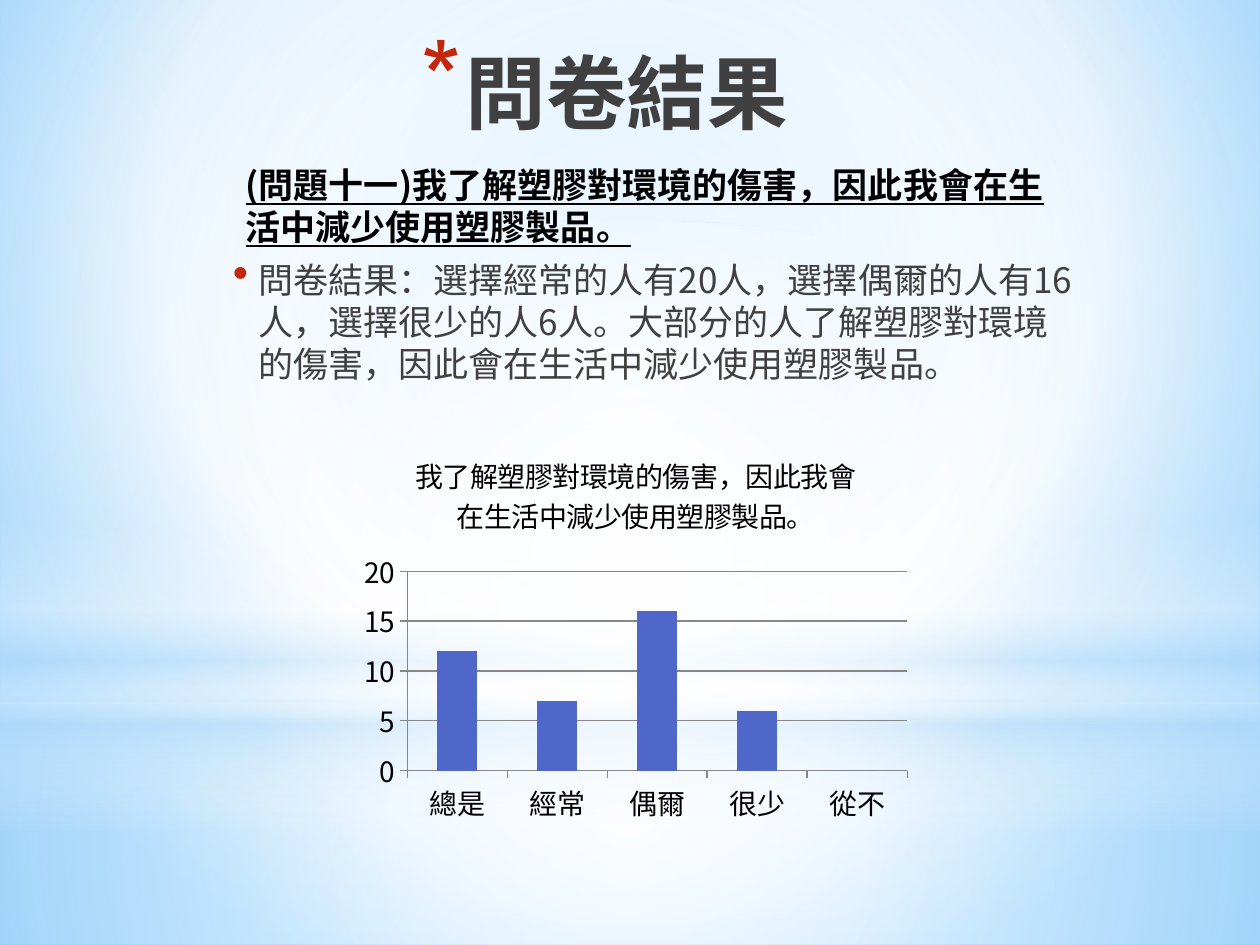
"""Build the survey result slide for question eleven, with its column chart."""
from dataclasses import dataclass

from lxml import etree
from pptx import Presentation
from pptx.chart.data import CategoryChartData
from pptx.dml.color import RGBColor
from pptx.enum.chart import XL_CHART_TYPE as ChartType, XL_TICK_MARK as TickMark
from pptx.enum.shapes import MSO_SHAPE as Preset
from pptx.enum.text import MSO_ANCHOR as Anchor, PP_ALIGN as Align
from pptx.oxml.ns import qn
from pptx.util import Inches, Pt


@dataclass(frozen=True)
class Theme:
    font: str = "Noto Sans CJK SC"
    text: RGBColor = RGBColor(0x40, 0x40, 0x40)
    strong: RGBColor = RGBColor(0, 0, 0)
    column: RGBColor = RGBColor(0x4E, 0x67, 0xC8)
    grid: RGBColor = RGBColor(0x87, 0x87, 0x87)
    bullet: str = "C3260C"
    white: str = "FFFFFF"
    haze: str = "B4DCFA"
    sky: str = "9ED5FF"
    deep_sky: str = "5BB9FF"
    title_size: Pt = Pt(46)
    body_size: Pt = Pt(20)
    chart_size: Pt = Pt(16)


theme = Theme()


def set_gradient(fill, parent, stops, focus):
    """Fill with position, colour, opacity stops around a focus, or downwards without one."""
    fill.solid()
    solid = parent.find(qn("a:solidFill"))
    gradient = etree.Element(qn("a:gradFill"), rotWithShape="1")
    stop_list = etree.SubElement(gradient, qn("a:gsLst"))
    for position, color, opacity in stops:
        stop = etree.SubElement(stop_list, qn("a:gs"), pos=str(position * 1000))
        color_node = etree.SubElement(stop, qn("a:srgbClr"), val=color)
        if opacity < 100:
            etree.SubElement(color_node, qn("a:alpha"), val=str(opacity * 1000))
    if focus:
        path_node = etree.SubElement(gradient, qn("a:path"), {"path": "circle"})
        edges = {edge: str(value * 1000) for edge, value in zip("ltrb", focus)}
        etree.SubElement(path_node, qn("a:fillToRect"), edges)
    else:
        etree.SubElement(gradient, qn("a:lin"), ang="5400000", scaled="0")
    parent.replace(solid, gradient)


def format_text(shape, text, size, color, bold=False, bullet=None, bullet_size=100, indent=0, hang=0):
    """Write one paragraph into a shape, with an optional hanging bullet."""
    frame = shape.text_frame
    frame.word_wrap = True
    frame.vertical_anchor = Anchor.TOP
    frame.text = text
    paragraph = frame.paragraphs[0]
    font = paragraph.font
    font.name, font.size, font.bold = theme.font, size, bold
    font.color.rgb = color
    etree.SubElement(font._element, qn("a:ea"), typeface=theme.font)
    if bullet:
        properties = paragraph._p.get_or_add_pPr()
        properties.set("marL", str(Inches(indent)))
        properties.set("indent", str(Inches(-hang)))
        bullet_color = etree.Element(qn("a:buClr"))
        etree.SubElement(bullet_color, qn("a:srgbClr"), val=theme.bullet)
        scale = etree.Element(qn("a:buSzPct"), val=str(bullet_size * 1000))
        character = etree.Element(qn("a:buChar"), char=bullet)
        for position, node in enumerate((bullet_color, scale, character)):
            properties.insert(position, node)
    return paragraph


presentation = Presentation()
presentation.slide_width, presentation.slide_height = Inches(10), Inches(7.5)
slide = presentation.slides.add_slide(presentation.slide_layouts[5])

background = slide.background.fill
background.solid()
set_gradient(
    background,
    slide._element.find(".//" + qn("p:bgPr")),
    [(0, theme.sky, 100), (60, theme.white, 100), (100, theme.deep_sky, 100)],
    (20, 10, 20, 60),
)

center = (50, 50, 50, 50)
lower_stops = [(0, theme.white, 91), (37, theme.white, 76), (100, theme.haze, 79)]
upper_stops = [(0, theme.white, 89), (48, theme.white, 62), (100, theme.haze, 79)]
band_stops = [
    (0, theme.white, 0), (29, theme.white, 30), (45, theme.haze, 40),
    (55, theme.white, 26), (65, theme.haze, 60), (100, theme.white, 0),
]
glow_stops = [(0, theme.white, 100), (56, theme.white, 0)]
for preset, top, height, stops, focus in (
    (Preset.RECTANGLE, 5.58, 1.92, lower_stops, center),
    (Preset.RECTANGLE, 0, 5.58, upper_stops, center),
    (Preset.RECTANGLE, 4.12, 2.5, band_stops, None),
    (Preset.OVAL, 1.75, 5.58, glow_stops, center),
):
    layer = slide.shapes.add_shape(preset, 0, Inches(top), Inches(10), Inches(height))
    layer.shadow.inherit = False
    layer.line.fill.background()
    set_gradient(layer.fill, layer._element.spPr, stops, focus)

title = slide.shapes.title
title.left, title.top, title.width, title.height = Inches(1.61), Inches(0.29), Inches(6.38), Inches(1.25)
slide.shapes._spTree.append(title._element)
heading = format_text(title, "問卷結果", theme.title_size, theme.text, True, "*", 128, 0.35, 0.35)
heading.alignment = Align.CENTER

result_box = slide.shapes.add_textbox(Inches(1.7), Inches(2), Inches(7), Inches(1.26))
result = format_text(
    result_box,
    "問卷結果：選擇經常的人有20人，選擇偶爾的人有16人，選擇很少的人6人。"
    "大部分的人了解塑膠對環境的傷害，因此會在生活中減少使用塑膠製品。",
    theme.body_size, theme.text, False, "•", 130, 0.25, 0.2,
)
result.space_before, result.space_after = Pt(4), Pt(3)

statement = "我了解塑膠對環境的傷害，因此我會在生活中減少使用塑膠製品。"
question_box = slide.shapes.add_textbox(Inches(1.85), Inches(1.25), Inches(6.69), Inches(0.77))
question = format_text(question_box, "(問題十一)" + statement, theme.body_size, theme.strong, True)
question.font.underline = True

chart_data = CategoryChartData()
chart_data.categories = ["總是", "經常", "偶爾", "很少", "從不"]
chart_data.add_series(statement, (12, 7, 16, 6, 0))
chart = slide.shapes.add_chart(
    ChartType.COLUMN_CLUSTERED, Inches(2.8), Inches(3.44), Inches(4.49), Inches(3.15), chart_data
).chart
chart.has_legend = False
chart.font.name, chart.font.size = theme.font, theme.chart_size
chart.font.color.rgb = theme.strong
chart.has_title = True
chart.chart_title.include_in_layout = False
chart.chart_title.text_frame.text = statement
title_font = chart.chart_title.text_frame.paragraphs[0].font
title_font.name, title_font.size, title_font.bold = theme.font, theme.chart_size, False
title_font.color.rgb = theme.strong

plot = chart.plots[0]
plot.gap_width = 150
plot.vary_by_categories = False
plot.series[0].format.fill.solid()
plot.series[0].format.fill.fore_color.rgb = theme.column

value_axis = chart.value_axis
value_axis.minimum_scale, value_axis.maximum_scale, value_axis.major_unit = 0, 20, 5
value_axis.has_major_gridlines = True
value_axis.major_gridlines.format.line.color.rgb = theme.grid
for axis in (chart.category_axis, value_axis):
    axis.major_tick_mark = TickMark.OUTSIDE
    axis.format.line.color.rgb = theme.grid
    axis.tick_labels.font.name = theme.font
    axis.tick_labels.font.size = theme.chart_size

presentation.save("out.pptx")
